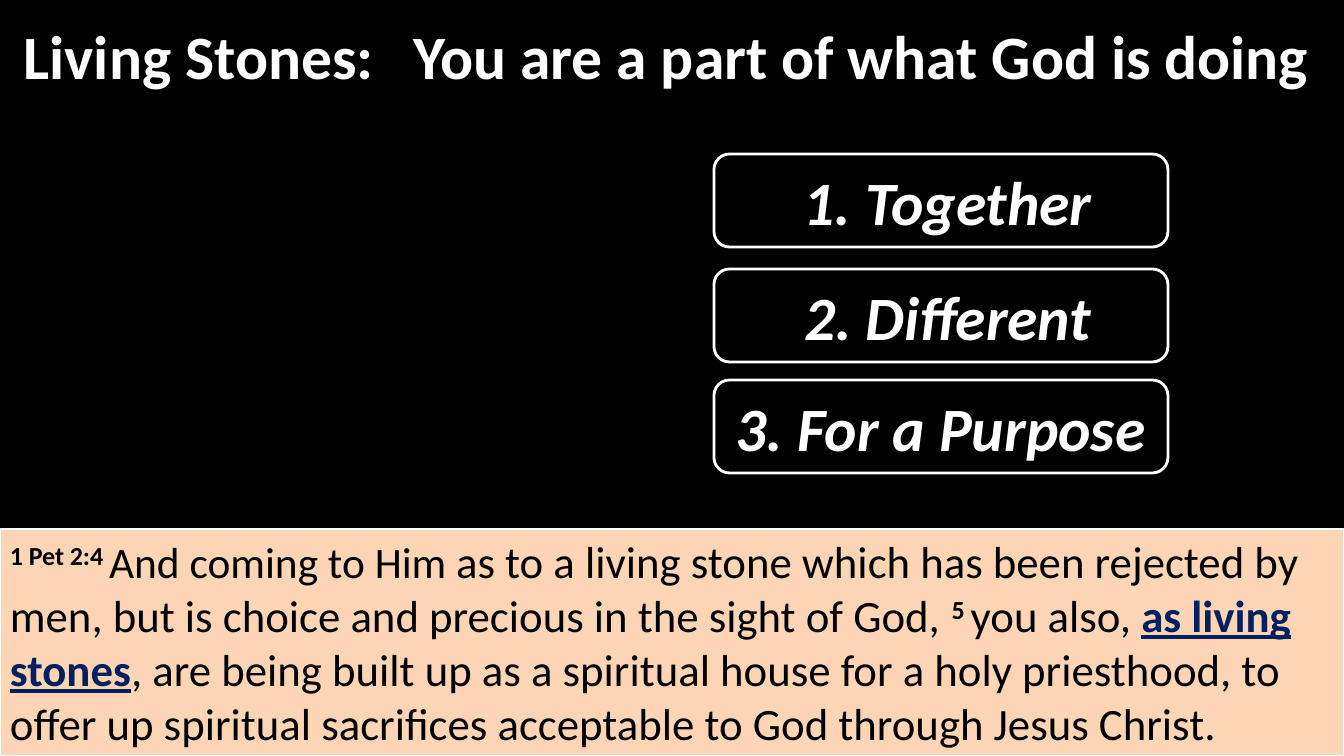
from dataclasses import dataclass

from lxml.etree import SubElement
from pptx import Presentation
from pptx.dml.color import RGBColor
from pptx.enum.shapes import MSO_SHAPE
from pptx.enum.text import MSO_ANCHOR, MSO_AUTO_SIZE, PP_ALIGN
from pptx.oxml.ns import qn
from pptx.shapes.autoshape import Shape
from pptx.slide import Slide
from pptx.text.text import TextFrame
from pptx.util import Emu, Pt

EMU_PER_PX = 12192000 / 1344
FONT_NAME = "Calibri"
BLACK = RGBColor(0x00, 0x00, 0x00)
WHITE = RGBColor(0xFF, 0xFF, 0xFF)
PEACH = RGBColor(0xFC, 0xD5, 0xB5)
NAVY = RGBColor(0x00, 0x20, 0x60)


@dataclass
class Box:
    left: int
    top: int
    width: int
    height: int


@dataclass
class Point:
    text: str
    top: int


@dataclass
class VerseRun:
    text: str
    size: int = 32
    bold: bool = False
    superscript: bool = False
    underline: bool = False
    color: RGBColor = BLACK


TITLE_BOX = Box(-4, 17, 420, 76)
SUBTITLE_BOX = Box(387, 17, 949, 76)
VERSE_BOX = Box(0, 529, 1344, 227)
POINT_LEFT, POINT_WIDTH, POINT_HEIGHT = 714, 454, 93

POINTS = [
    Point(" 1. Together", 154),
    Point(" 2. Different", 269),
    Point("3. For a Purpose", 380),
]

VERSE = [
    VerseRun("1 Pet 2:4 ", bold=True, superscript=True),
    VerseRun("And coming to Him ", size=31),
    VerseRun("as to a living stone which has been rejected by men, "
             "but is choice and precious in the sight of God, "),
    VerseRun("5 ", bold=True, superscript=True),
    VerseRun("you also, "),
    VerseRun("as living stones", bold=True, underline=True, color=NAVY),
    VerseRun(", are being built up as a spiritual house for a holy priesthood, "
             "to offer up spiritual sacrifices acceptable to God through Jesus Christ. "),
]


def px(length: int) -> Emu:
    return Emu(round(length * EMU_PER_PX))


def place(shape: Shape, box: Box) -> None:
    shape.left, shape.top = px(box.left), px(box.top)
    shape.width, shape.height = px(box.width), px(box.height)


def add_text(frame: TextFrame, text: str, *, size: int = 44, bold: bool = True,
             italic: bool = False, underline: bool = False,
             superscript: bool = False, color: RGBColor = WHITE,
             align: PP_ALIGN = PP_ALIGN.CENTER,
             anchor: MSO_ANCHOR = MSO_ANCHOR.MIDDLE) -> None:
    frame.word_wrap = True
    frame.auto_size = MSO_AUTO_SIZE.NONE
    frame.vertical_anchor = anchor
    paragraph = frame.paragraphs[0]
    paragraph.alignment = align
    run = paragraph.add_run()
    run.text = text
    font = run.font
    font.name, font.size = FONT_NAME, Pt(size)
    font.bold, font.italic, font.underline = bold, italic, underline
    font.color.rgb = color
    if superscript:
        run._r.get_or_add_rPr().set("baseline", "30000")


def add_box(slide: Slide, kind: MSO_SHAPE, box: Box, *,
            fill: RGBColor | None = None, opacity: int = 100,
            line_width: float = 0) -> Shape:
    shape = slide.shapes.add_shape(kind, px(box.left), px(box.top),
                                   px(box.width), px(box.height))
    shape.shadow.inherit = False
    if fill is None:
        shape.fill.background()
    else:
        shape.fill.solid()
        shape.fill.fore_color.rgb = fill
        if opacity < 100:
            color = shape._element.spPr.find(qn("a:solidFill"))[0]
            SubElement(color, qn("a:alpha")).set("val", str(opacity * 1000))
    if line_width:
        shape.line.color.rgb = WHITE
        shape.line.width = Pt(line_width)
    else:
        shape.line.fill.background()
    return shape


def main() -> None:
    presentation = Presentation()
    presentation.slide_width, presentation.slide_height = px(1344), px(756)
    slide = presentation.slides.add_slide(presentation.slide_layouts[5])
    slide.background.fill.solid()
    slide.background.fill.fore_color.rgb = BLACK

    # Heading in two parts
    title = slide.shapes.title
    place(title, TITLE_BOX)
    add_text(title.text_frame, "Living Stones: ")
    subtitle = add_box(slide, MSO_SHAPE.ROUNDED_RECTANGLE, SUBTITLE_BOX)
    add_text(subtitle.text_frame, "You are a part of what God is doing")

    # Three points
    for point in POINTS:
        box = Box(POINT_LEFT, point.top, POINT_WIDTH, POINT_HEIGHT)
        shape = add_box(slide, MSO_SHAPE.ROUNDED_RECTANGLE, box,
                        fill=BLACK, opacity=75, line_width=2)
        add_text(shape.text_frame, point.text, italic=True)

    # Scripture passage
    passage = add_box(slide, MSO_SHAPE.RECTANGLE, VERSE_BOX, fill=PEACH, line_width=1.5)
    for part in VERSE:
        add_text(passage.text_frame, part.text, size=part.size, bold=part.bold,
                 underline=part.underline, superscript=part.superscript,
                 color=part.color, align=PP_ALIGN.LEFT, anchor=MSO_ANCHOR.TOP)

    presentation.save("out.pptx")


if __name__ == "__main__":
    main()
